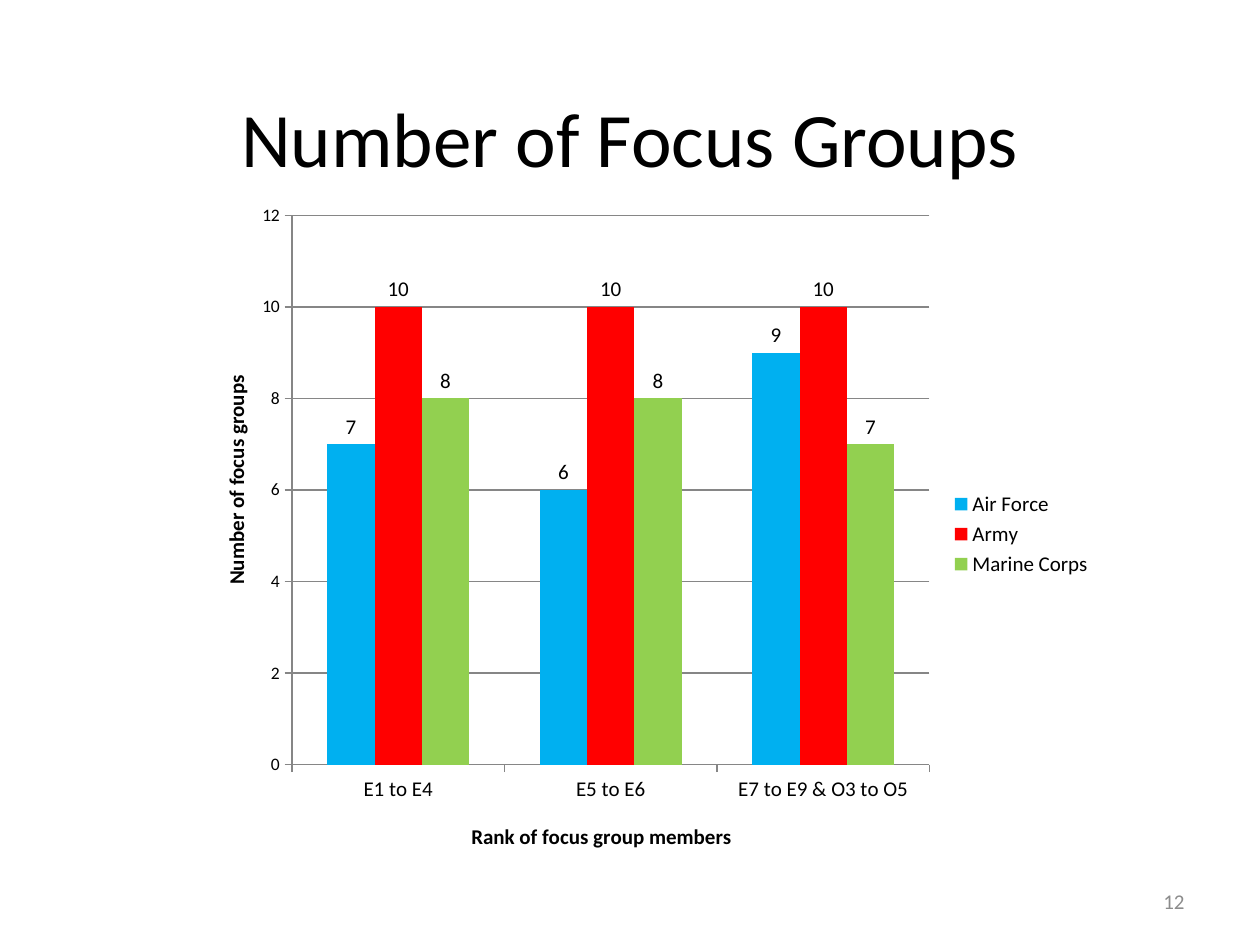
from typing import NamedTuple

from lxml import etree
from pptx import Presentation
from pptx.chart.data import CategoryChartData
from pptx.dml.color import RGBColor
from pptx.enum import chart as ch, text
from pptx.oxml.ns import qn
from pptx.util import Pt

FONT = "Calibri"
BLACK = "000000"
AXIS_GRAY = "868686"


class Service(NamedTuple):
    name: str
    groups: tuple[int, ...]
    color: str


RANKS = ("E1 to E4", "E5 to E6", "E7 to E9 & O3 to O5")
SERVICES = (
    Service("Air Force", (7, 6, 9), "00B0F0"),
    Service("Army", (10, 10, 10), "FF0000"),
    Service("Marine Corps", (8, 8, 7), "92D050"),
)


def rgb(color: str) -> RGBColor:
    return RGBColor.from_string(color)


def style_font(font, size: float, color: str = BLACK, bold: bool = False) -> None:
    font.name, font.size, font.bold = FONT, Pt(size), bold
    font.color.rgb = rgb(color)


def write(frame, content: str, *, size: float, color: str = BLACK,
          bold: bool = False, align=text.PP_ALIGN.CENTER) -> None:
    frame.text = content
    frame.paragraphs[0].alignment = align
    style_font(frame.paragraphs[0].runs[0].font, size, color, bold)


def place(shape, left: float, top: float, width: float, height: float) -> None:
    shape.left, shape.top = Pt(left), Pt(top)
    shape.width, shape.height = Pt(width), Pt(height)


def set_layout(parent, index: int, **settings) -> None:
    """Give a chart part a manual layout, in fractions of the chart."""
    for old in parent.findall(qn("c:layout")):
        parent.remove(old)
    layout = etree.Element(qn("c:layout"))
    manual = etree.SubElement(layout, qn("c:manualLayout"))
    for tag, value in settings.items():
        etree.SubElement(manual, qn(f"c:{tag}")).set("val", str(value))
    parent.insert(index, layout)


def style_axis(axis, title: str, size: float, x: float, y: float) -> None:
    write(axis.axis_title.text_frame, title, size=12, bold=True)
    title_xml = axis.axis_title._element
    after_text = title_xml.index(title_xml.find(qn("c:tx"))) + 1
    set_layout(title_xml, after_text, xMode="edge", yMode="edge", x=x, y=y)
    style_font(axis.tick_labels.font, size)
    axis.major_tick_mark = ch.XL_TICK_MARK.OUTSIDE
    axis.minor_tick_mark = ch.XL_TICK_MARK.NONE
    axis.format.line.color.rgb = rgb(AXIS_GRAY)
    axis.format.line.width = Pt(0.75)


def add_focus_chart(slide) -> None:
    data = CategoryChartData()
    data.categories = RANKS
    for service in SERVICES:
        data.add_series(service.name, service.groups)
    chart = slide.shapes.add_chart(
        ch.XL_CHART_TYPE.COLUMN_CLUSTERED,
        Pt(103.5), Pt(111.5), Pt(528), Pt(387.5), data).chart
    chart.has_title = False
    style_font(chart.font, 10)

    chart.has_legend = True
    chart.legend.position = ch.XL_LEGEND_POSITION.RIGHT
    chart.legend.include_in_layout = False
    style_font(chart.legend.font, 12)

    style_axis(chart.category_axis, "Rank of focus group members", 12, 0.31, 0.92)
    counts = chart.value_axis
    style_axis(counts, "Number of focus groups", 10, 0.04, 0.26)
    counts.minimum_scale, counts.maximum_scale, counts.major_unit = 0, 12, 2
    counts.has_major_gridlines = True
    counts.major_gridlines.format.line.color.rgb = rgb(AXIS_GRAY)
    counts.major_gridlines.format.line.width = Pt(0.75)

    plot = chart.plots[0]
    plot.gap_width, plot.overlap, plot.vary_by_categories = 150, 0, False
    for service, series in zip(SERVICES, plot.series):
        series.format.fill.solid()
        series.format.fill.fore_color.rgb = rgb(service.color)
        series.invert_if_negative = False
        labels = series.data_labels
        labels.show_value = True
        labels.position = ch.XL_LABEL_POSITION.OUTSIDE_END
        style_font(labels.font, 12)

    plot_area = chart._chartSpace.find(f".//{qn('c:plotArea')}")
    set_layout(plot_area, 0, layoutTarget="inner", xMode="edge", yMode="edge",
               x=0.12, y=0.03, w=0.69, h=0.81)


def main() -> None:
    deck = Presentation()
    deck.slide_width, deck.slide_height = Pt(720), Pt(540)
    slide = deck.slides.add_slide(deck.slide_layouts[5])

    title = slide.shapes.title
    place(title, 36, 33, 648, 90)
    write(title.text_frame, "Number of Focus Groups", size=44)
    title.text_frame.vertical_anchor = text.MSO_ANCHOR.MIDDLE

    add_focus_chart(slide)

    page_number = slide.shapes.add_textbox(Pt(516), Pt(500.5), Pt(168), Pt(28.75))
    page_number.text_frame.word_wrap = True
    page_number.text_frame.vertical_anchor = text.MSO_ANCHOR.MIDDLE
    write(page_number.text_frame, "12", size=12, color="8C8C8C",
          align=text.PP_ALIGN.RIGHT)

    deck.save("out.pptx")


if __name__ == "__main__":
    main()
